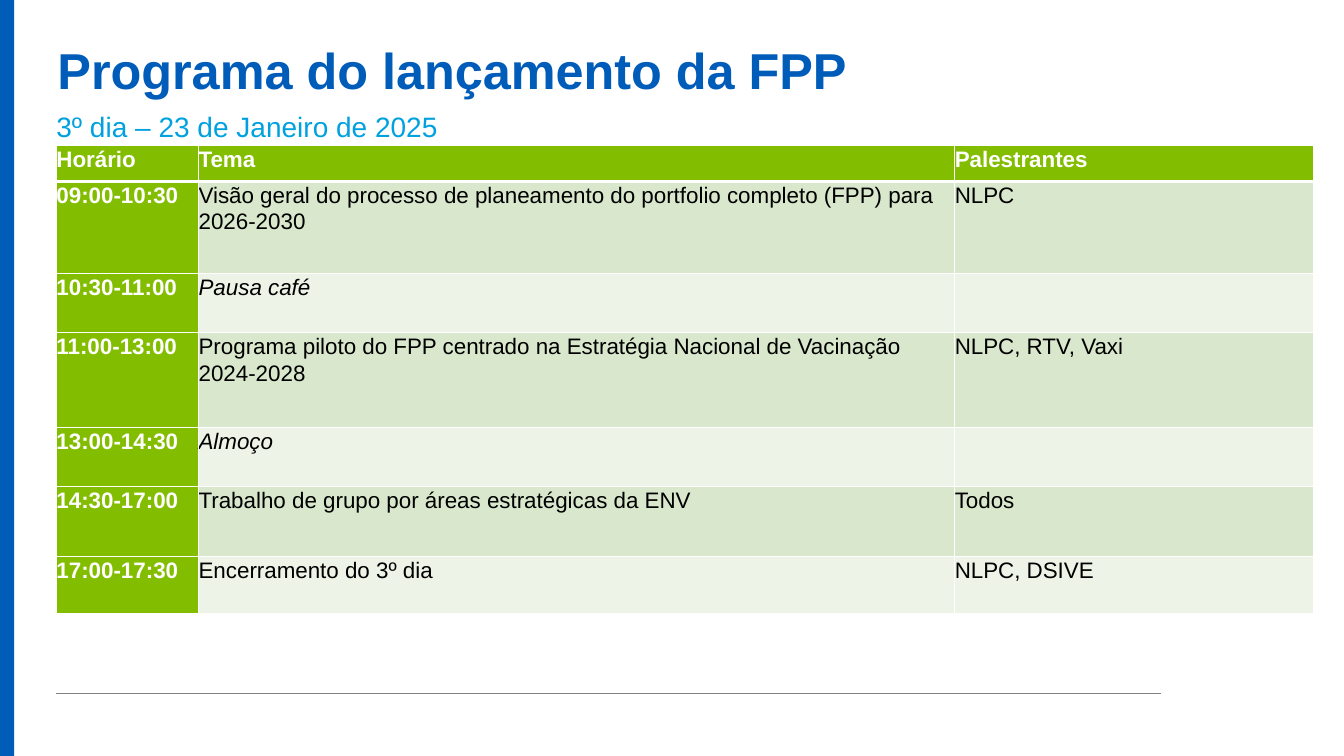
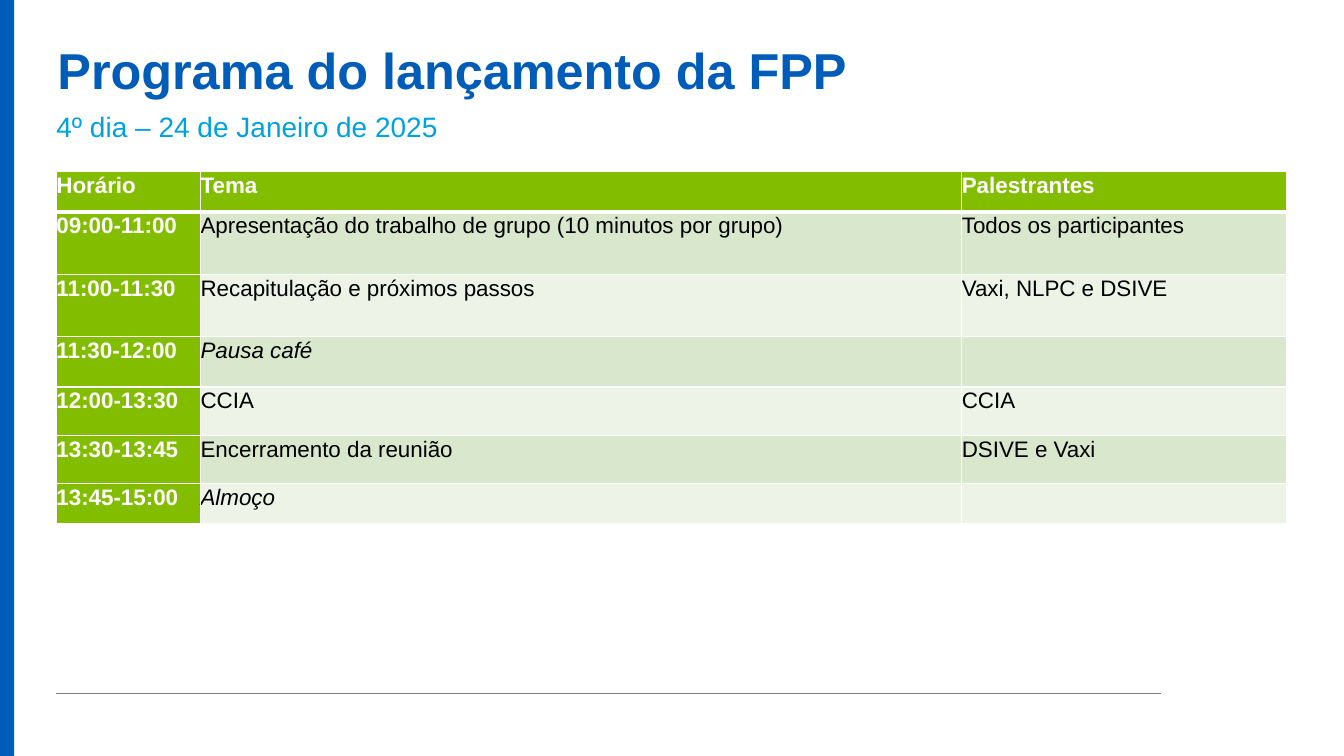
from lxml.etree import SubElement
from pptx import Presentation
from pptx.dml.color import RGBColor
from pptx.enum.shapes import MSO_CONNECTOR, MSO_SHAPE
from pptx.enum.text import MSO_ANCHOR
from pptx.oxml.ns import qn
from pptx.util import Inches, Pt

BLUE = RGBColor(0x00, 0x5C, 0xB9)
CYAN = RGBColor(0x00, 0xA1, 0xDF)
GREEN = RGBColor(0x83, 0xBD, 0x00)
PALE_GREEN = RGBColor(0xD9, 0xE8, 0xCC)
PALEST_GREEN = RGBColor(0xED, 0xF4, 0xE7)
GREY = RGBColor(0x80, 0x80, 0x80)
WHITE = RGBColor(0xFF, 0xFF, 0xFF)
BLACK = RGBColor(0x00, 0x00, 0x00)

FONT = "Arial"
SLIDE_W, SLIDE_H = 13.33, 7.5
MARGIN = 0.56
CONTENT_W = 12.2
TITLE = "Programa do lançamento da FPP"
HEADINGS = ("Horário", "Tema", "Palestrantes")

# Each session: row height, time, topic, speakers (none for a break).
DAYS = [
    {
        "subtitle": "3º dia – 23 de Janeiro de 2025",
        "top": 1.44,
        "columns": (1.41, 7.5, 3.56),
        "heading_height": 0.36,
        "sessions": [
            (0.91, "09:00-10:30", "Visão geral do processo de planeamento do portfolio "
                                  "completo (FPP) para 2026-2030", "NLPC"),
            (0.59, "10:30-11:00", "Pausa café", ""),
            (0.94, "11:00-13:00", "Programa piloto do FPP centrado na Estratégia Nacional "
                                  "de Vacinação 2024-2028", "NLPC, RTV, Vaxi"),
            (0.59, "13:00-14:30", "Almoço", ""),
            (0.69, "14:30-17:00", "Trabalho de grupo por áreas estratégicas da ENV", "Todos"),
            (0.57, "17:00-17:30", "Encerramento do 3º dia", "NLPC, DSIVE"),
        ],
    },
    {
        "subtitle": "4º dia – 24 de Janeiro de 2025",
        "top": 1.7,
        "columns": (1.43, 7.55, 3.22),
        "heading_height": 0.4,
        "sessions": [
            (0.62, "09:00-11:00", "Apresentação do trabalho de grupo (10 minutos por grupo)",
             "Todos os participantes"),
            (0.62, "11:00-11:30", "Recapitulação e próximos passos", "Vaxi, NLPC e DSIVE"),
            (0.5, "11:30-12:00", "Pausa café", ""),
            (0.48, "12:00-13:30", "CCIA", "CCIA"),
            (0.48, "13:30-13:45", "Encerramento da reunião", "DSIVE e Vaxi"),
            (0.4, "13:45-15:00", "Almoço", ""),
        ],
    },
]


def write_text(frame, text, *, size, color, bold=False, italic=False, spacing=1.0, after=0):
    frame.word_wrap = True
    paragraph = frame.paragraphs[0]
    paragraph.line_spacing = spacing
    paragraph.space_after = Pt(after)
    run = paragraph.add_run()
    run.text = text
    font = run.font
    font.name, font.size, font.bold, font.italic = FONT, Pt(size), bold, italic
    font.color.rgb = color


def add_heading(slide, left, top, width, height, text, **text_format):
    frame = slide.shapes.add_textbox(
        Inches(left), Inches(top), Inches(width), Inches(height)).text_frame
    frame.margin_left = frame.margin_right = frame.margin_top = frame.margin_bottom = 0
    frame.vertical_anchor = MSO_ANCHOR.MIDDLE
    write_text(frame, text, **text_format)


def add_frame(slide):
    """Place the side band and the footer rule shared by all slides."""
    band = slide.shapes.add_shape(MSO_SHAPE.RECTANGLE, 0, 0, Inches(0.14), Inches(SLIDE_H))
    band.shadow.inherit = False
    band.fill.solid()
    band.fill.fore_color.rgb = BLUE
    band.line.fill.background()

    footer_rule = slide.shapes.add_connector(
        MSO_CONNECTOR.STRAIGHT, Inches(MARGIN), Inches(6.88), Inches(11.52), Inches(6.88))
    footer_rule.line.color.rgb = GREY
    footer_rule.line.width = Pt(0.5)
    SubElement(footer_rule._element.spPr, qn("a:effectLst"))


def set_borders(cell, top, bottom):
    """Draw white borders; the sides are always 1 pt wide."""
    properties = cell._tc.get_or_add_tcPr()
    for side, width in (("L", 1), ("R", 1), ("T", top), ("B", bottom)):
        border = SubElement(properties, qn(f"a:ln{side}"), w=str(Pt(width)))
        SubElement(SubElement(border, qn("a:solidFill")), qn("a:srgbClr"), val=str(WHITE))


def fill_cell(cell, text, row, column, is_break):
    cell.margin_left = cell.margin_right = cell.margin_top = cell.margin_bottom = 0
    set_borders(cell, top=3 if row == 1 else 1, bottom=3 if row == 0 else 1)
    is_heading = row == 0 or column == 0
    cell.fill.solid()
    if is_heading:
        cell.fill.fore_color.rgb = GREEN
    else:
        cell.fill.fore_color.rgb = PALE_GREEN if row % 2 else PALEST_GREEN
    if text:
        write_text(cell.text_frame, text, size=16, color=WHITE if is_heading else BLACK,
                   bold=is_heading, italic=is_break and not is_heading,
                   spacing=1.07, after=8)


def add_schedule(slide, left, top, columns, heading_height, sessions):
    heights = [heading_height] + [session[0] for session in sessions]
    rows = [HEADINGS] + [session[1:] for session in sessions]
    schedule = slide.shapes.add_table(
        len(rows), len(columns), Inches(left), Inches(top),
        Inches(sum(columns)), Inches(sum(heights))).table
    for column, width in zip(schedule.columns, columns):
        column.width = Inches(width)
    for row, height in zip(schedule.rows, heights):
        row.height = Inches(height)
    for row, texts in enumerate(rows):
        for column, text in enumerate(texts):
            fill_cell(schedule.cell(row, column), text, row, column, is_break=not texts[-1])


def add_day_slide(deck, subtitle, **schedule):
    slide = deck.slides.add_slide(deck.slide_layouts[6])
    add_frame(slide)
    add_heading(slide, MARGIN + 0.01, 0.4, CONTENT_W, 0.65, TITLE,
                size=36, color=BLUE, bold=True, spacing=0.9)
    add_heading(slide, MARGIN, 1.05, CONTENT_W, 0.38, subtitle,
                size=20, color=CYAN, spacing=1.1)
    add_schedule(slide, MARGIN, **schedule)


def main():
    deck = Presentation()
    deck.slide_width, deck.slide_height = Inches(SLIDE_W), Inches(SLIDE_H)
    for day in DAYS:
        add_day_slide(deck, **day)
    deck.save("out.pptx")


if __name__ == "__main__":
    main()
